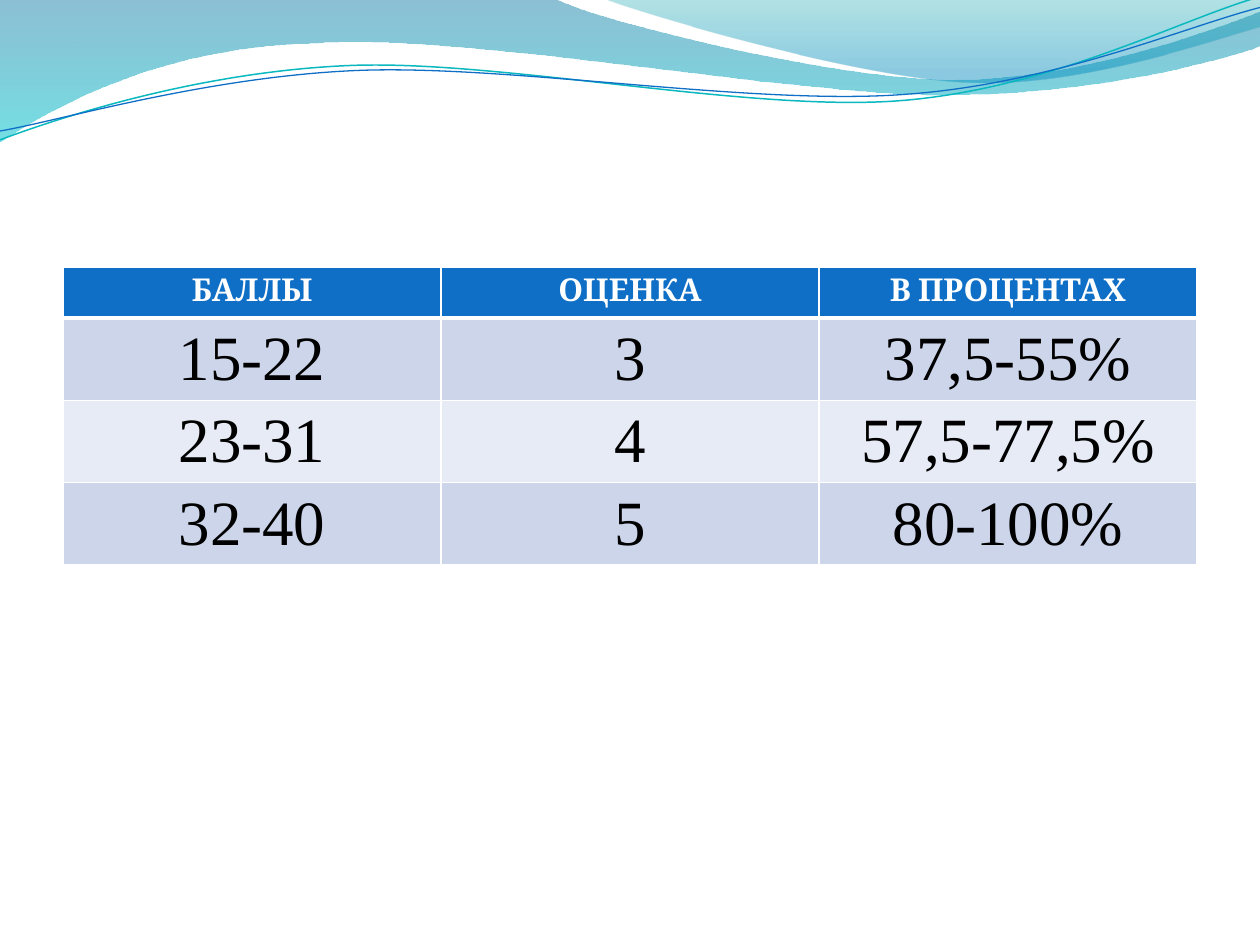
import math
from dataclasses import dataclass
from typing import Optional

import pptx
import pptx.enum.text
import pptx.oxml
import pptx.oxml.ns
import pptx.shapes.shapetree
import pptx.util
from lxml import etree
from pptx.dml.color import RGBColor
from pptx.util import Cm

WHITE = RGBColor(0xFF, 0xFF, 0xFF)
BLACK = RGBColor(0x00, 0x00, 0x00)
BLUE = RGBColor(0x0F, 0x6F, 0xC6)
TEAL = RGBColor(0x0A, 0xB8, 0xBF)
BAND_DARK = RGBColor(0xCC, 0xD5, 0xEA)
BAND_LIGHT = RGBColor(0xE7, 0xEB, 0xF5)
WAVE_TOP = RGBColor(0x00, 0x74, 0xA1)
WAVE_BOTTOM = RGBColor(0x00, 0xC6, 0xCF)
CREST_TOP = RGBColor(0x00, 0xA1, 0xA9)
CREST_BOTTOM = RGBColor(0x00, 0x8B, 0xBF)

CM_PER_INCH = 2.54
LINE_TILT = -2.7


@dataclass
class Stop:
    position: float
    color: RGBColor
    opacity: int


@dataclass
class Wave:
    """Path in inches: a 2-number segment is a line, a 6-number one a Bezier curve."""
    start: tuple
    segments: list
    stops: Optional[list] = None
    line: Optional[RGBColor] = None
    width: float = 0
    center: tuple = (0, 0)
    tilt: float = 0


@dataclass
class RowStyle:
    fill: RGBColor
    color: RGBColor
    font: str
    size: int
    bold: bool


FILLED_WAVES = [
    Wave((0, 0), [
        (4.4, -0.01),
        (4.76, 0.17, 6.64, 0.63, 7.58, 0.63),
        (8.53, 0.63, 9.58, 0.26, 10, 0.09),
        (10.01, 0.36),
        (9.83, 0.44, 8.7, 0.76, 7.46, 0.75),
        (6.22, 0.75, 3.82, 0.28, 2.57, 0.34),
        (1.29, 0.36, 0.46, 0.83, -0.01, 1.13),
    ], stops=[Stop(0, WAVE_TOP, 45), Stop(1, WAVE_BOTTOM, 55)]),
    Wave((4.79, -0.01), [
        (5.09, 0.11, 6.82, 0.62, 7.69, 0.65),
        (8.56, 0.69, 9.61, 0.32, 10, 0.21),
        (10, 0),
    ], stops=[Stop(0, CREST_TOP, 30), Stop(0.8, CREST_BOTTOM, 45)]),
]
LINE_WAVES = [
    Wave((0, 1.11), [
        (0.48, 0.93, 1.58, 0.57, 2.77, 0.52),
        (3.95, 0.47, 5.93, 0.89, 7.13, 0.8),
        (8.33, 0.71, 9.38, 0.15, 9.98, -0.02),
    ], line=TEAL, width=0.85, center=(4.99, 0.58), tilt=LINE_TILT),
    Wave((0, 1.04), [
        (0.47, 0.96, 1.64, 0.61, 2.83, 0.56),
        (4.03, 0.51, 5.97, 0.84, 7.17, 0.75),
        (8.36, 0.67, 9.41, 0.21, 10, 0.06),
    ], line=BLUE, width=0.75, center=(5, 0.59), tilt=LINE_TILT),
]

GRADES = [
    ("БАЛЛЫ", "ОЦЕНКА", "В ПРОЦЕНТАХ"),
    ("15-22", "3", "37,5-55%"),
    ("23-31", "4", "57,5-77,5%"),
    ("32-40", "5", "80-100%"),
]
HEADER = RowStyle(BLUE, WHITE, "Cambria", 18, True)
BODY = [RowStyle(fill, BLACK, "Times New Roman", 36, False)
        for fill in (BAND_DARK, BAND_LIGHT)]


def path_points(wave: Wave) -> list:
    """Return end and control points in EMU, as they lie before the shape is tilted."""
    flat = [v for seg in [wave.start, *wave.segments] for v in seg]
    cx, cy = wave.center
    cos, sin = (f(math.radians(-wave.tilt)) for f in (math.cos, math.sin))
    points = []
    for x, y in zip(flat[::2], flat[1::2]):
        dx, dy = x - cx, y - cy
        turned = (cx + dx * cos - dy * sin, cy + dx * sin + dy * cos)
        points.append(tuple(Cm(v * CM_PER_INCH) for v in turned))
    return points


def bend_segments(sp: pptx.shapes.autoshape.Shape, segments: list) -> None:
    """Join the line segments of each curve into one cubic Bezier."""
    qn = pptx.oxml.ns.qn
    lines = iter(list(sp._element.spPr.iter(qn("a:lnTo"))))
    for seg in segments:
        first = next(lines)
        if len(seg) == 2:
            continue
        curve = etree.Element(qn("a:cubicBezTo"))
        first.addprevious(curve)
        for line in (first, next(lines), next(lines)):
            curve.append(line[0])
            line.getparent().remove(line)


def add_wave(shapes: pptx.shapes.shapetree._BaseGroupShapes, wave: Wave) -> None:
    points = path_points(wave)
    builder = shapes.build_freeform(*points[0])
    builder.add_line_segments(points[1:], close=wave.stops is not None)
    sp = builder.convert_to_shape()
    bend_segments(sp, wave.segments)
    sp.rotation = wave.tilt
    sp.shadow.inherit = False
    if wave.stops:
        sp.line.fill.background()
        sp.fill.gradient()
        sp.fill.gradient_angle = 270
        for gs, stop in zip(sp.fill.gradient_stops, wave.stops):
            gs.position = stop.position
            gs.color.rgb = stop.color
        colors = sp._element.spPr.iter(pptx.oxml.ns.qn("a:srgbClr"))
        for clr, stop in zip(colors, wave.stops):
            clr.append(pptx.oxml.parse_xml(
                f'<a:alpha {pptx.oxml.ns.nsdecls("a")} val="{stop.opacity * 1000}"/>'))
    else:
        sp.fill.background()
        sp.line.color.rgb = wave.line
        sp.line.width = pptx.util.Pt(wave.width)


def set_borders(cell: pptx.table._Cell, top: float, bottom: float) -> None:
    tcPr = cell._tc.get_or_add_tcPr()
    for side, width in (("L", 1), ("R", 1), ("T", top), ("B", bottom)):
        tcPr.append(pptx.oxml.parse_xml(
            f'<a:ln{side} {pptx.oxml.ns.nsdecls("a")} w="{pptx.util.Pt(width)}">'
            f'<a:solidFill><a:srgbClr val="{WHITE}"/></a:solidFill></a:ln{side}>'))


def fill_cell(cell: pptx.table._Cell, text: str, style: RowStyle) -> None:
    cell.fill.solid()
    cell.fill.fore_color.rgb = style.fill
    p = cell.text_frame.paragraphs[0]
    p.text = text
    p.alignment = pptx.enum.text.PP_ALIGN.CENTER
    font = p.runs[0].font
    font.name = style.font
    font.size = pptx.util.Pt(style.size)
    font.bold = style.bold
    font.color.rgb = style.color


def add_grades(s: pptx.slide.Slide) -> None:
    styles = [HEADER] + [BODY[i % 2] for i in range(len(GRADES) - 1)]
    frame = s.shapes.add_table(len(GRADES), len(GRADES[0]), Cm(1.27), Cm(5.38),
                               Cm(22.86), Cm(6.38))
    table = frame.table
    for i, (texts, style) in enumerate(zip(GRADES, styles)):
        table.rows[i].height = Cm(1.03)
        for j, text in enumerate(texts):
            cell = table.cell(i, j)
            set_borders(cell, top=3 if i == 1 else 1, bottom=3 if i == 0 else 1)
            fill_cell(cell, text, style)
    frame.height = Cm(6.38)


def main() -> None:
    prs = pptx.Presentation()
    prs.slide_width, prs.slide_height = Cm(25.4), Cm(19.05)
    s = prs.slides.add_slide(prs.slide_layouts[6])
    for wave in FILLED_WAVES:
        add_wave(s.shapes, wave)
    lines = s.shapes.add_group_shape()
    for wave in LINE_WAVES:
        add_wave(lines.shapes, wave)
    add_grades(s)
    prs.save("out.pptx")


if __name__ == "__main__":
    main()
